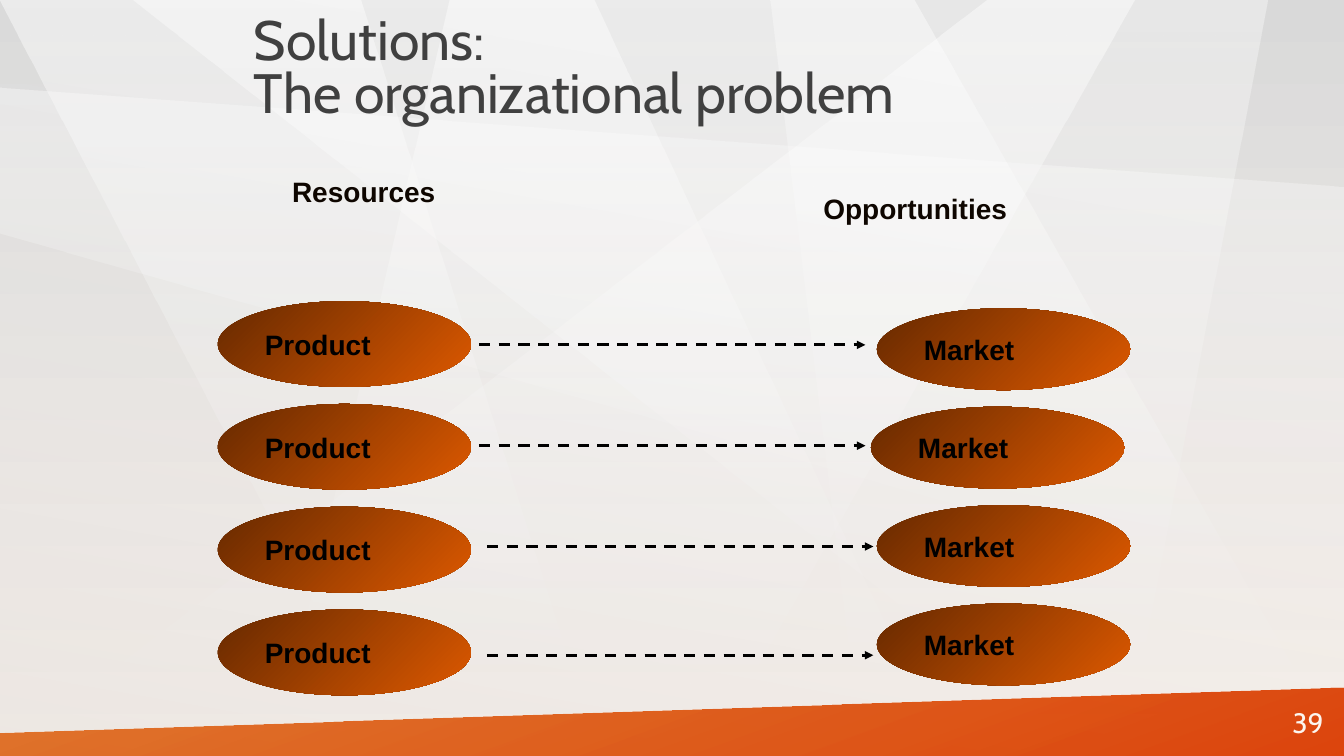
from dataclasses import dataclass

from lxml.etree import SubElement
from pptx import Presentation
from pptx.dml.color import RGBColor
from pptx.enum.dml import MSO_LINE
from pptx.enum.shapes import MSO_CONNECTOR, MSO_SHAPE
from pptx.enum.text import MSO_ANCHOR, PP_ALIGN
from pptx.oxml.ns import qn
from pptx.util import Cm, Pt

RECT, OVAL = MSO_SHAPE.RECTANGLE, MSO_SHAPE.OVAL
STRAIGHT, DASH = MSO_CONNECTOR.STRAIGHT, MSO_LINE.DASH
TOP, MIDDLE = MSO_ANCHOR.TOP, MSO_ANCHOR.MIDDLE
LEFT, RIGHT = PP_ALIGN.LEFT, PP_ALIGN.RIGHT


@dataclass(frozen=True)
class Theme:
    head: str = "Cabin"
    body: str = "Arial"
    title: float = 39.6
    text: float = 20
    grey: str = "404040"
    ink: str = "0E0600"
    black: str = "000000"
    white: str = "FFFFFF"
    cream: str = "FCF5EF"
    silver: str = "D9D9D9"
    shade: str = "BFBFBF"
    brown: str = "662900"
    orange: str = "DD5900"
    red: str = "DC3C00"


theme = Theme()


def paint(item, angle, *stops):
    """Give item a two-stop gradient; each stop is a colour and its opacity in percent."""
    item.fill.gradient()
    item.fill.gradient_angle = 360 - angle
    for stop, (color, alpha) in zip(item.fill.gradient_stops, stops):
        stop.color.rgb = RGBColor.from_string(color)
        if alpha < 100:
            node = item._element.find(f".//{qn('a:gs')}[@pos='{round(stop.position * 100000)}']")
            SubElement(node[0], qn("a:alpha"), val=str(alpha * 1000))
    if hasattr(item, "line"):
        item.line.fill.background()
        item.shadow.inherit = False


def write(shape, lines, color, font=theme.body, size=theme.text, bold=True,
          anchor=MIDDLE, align=LEFT, space=1.0):
    frame = shape.text_frame
    frame.word_wrap = True
    frame.vertical_anchor = anchor
    para = frame.paragraphs[0]
    para.alignment = align
    para.line_spacing = space
    for i, line in enumerate(lines):
        if i:
            para.add_line_break()
        run = para.add_run()
        run.text = line
        run.font.name, run.font.size, run.font.bold = font, Pt(size), bold
        run.font.color.rgb = RGBColor.from_string(color)


deck = Presentation()
deck.slide_width, deck.slide_height = Cm(33.87), Cm(19.05)
slide = deck.slides.add_slide(deck.slide_layouts[6])
shapes = slide.shapes
paint(slide.background, 90, (theme.silver, 100), (theme.cream, 100))

# Backdrop: light facets, a soft shade and the orange floor
clear = (theme.white, 0)
soft, faint = (theme.white, 50), (theme.white, 40)
floor = (theme.orange, 80)
facets = [
    (soft, [(24.87, 0), (0, 19.05), (17.81, 19.05), (28.58, 0)]),
    (soft, [(0, 0), (9.09, 0), (15.09, 19.05), (9.93, 19.05)]),
    (soft, [(3.35, 0), (23.04, 0), (33.87, 19.05), (27.51, 19.05)]),
    (faint, [(19.43, 0), (21.74, 19.05), (28.32, 19.05), (31.93, 0)]),
    (soft, [(14.96, 0), (11.33, 0), (6.91, 19.05), (23.85, 19.05)]),
    (faint, [(0, 2.21), (33.87, 4.72), (33.87, 15.49), (0, 5.89)]),
    (floor, [(0, 18.47), (33.87, 17.32), (33.87, 19.05), (0, 19.05)]),
]
for start, points in facets:
    if start is floor:
        veil = shapes.add_shape(RECT, 0, 0, deck.slide_width, deck.slide_height)
        paint(veil, 280, (theme.shade, 25), clear)
    first, *rest = [(Cm(x), Cm(y)) for x, y in points]
    path = shapes.build_freeform(*first, scale=1.0)
    path.add_line_segments(rest, close=True)
    facet = path.convert_to_shape()
    if start is floor:
        paint(facet, 70, start, (theme.red, 95))
    else:
        paint(facet, 90, start, clear)

# Title and column heads
title = shapes.add_textbox(Cm(6.15), Cm(0.2), Cm(20.32), Cm(3.18))
write(title, ["Solutions: ", "The organizational problem"], theme.grey,
      font=theme.head, size=theme.title, bold=False, space=0.8)
for name, x, y, width in [("Resources", 7.11, 4.27, 4.7), ("Opportunities", 20.5, 4.7, 9.32)]:
    label = shapes.add_textbox(Cm(x), Cm(y), Cm(width), Cm(1.96))
    write(label, [name], theme.ink, anchor=TOP)

# Products on the left, markets on the right
columns = [
    ("Product", [5.49] * 4, 7.59, 2.59, 2.16),
    ("Market", [22.1, 21.95, 22.1, 22.1], 7.77, 2.48, 2.06),
]
for name, lefts, top, step, height in columns:
    for row, x in enumerate(lefts):
        oval = shapes.add_shape(OVAL, Cm(x), Cm(top + row * step), Cm(6.38), Cm(height))
        paint(oval, 45, (theme.brown, 100), (theme.orange, 100))
        write(oval, [name], theme.black)

# Dashed arrows
for x, y in [(12.07, 8.69), (12.07, 11.23), (12.27, 13.77), (12.27, 16.51)]:
    arrow = shapes.add_connector(STRAIGHT, Cm(x), Cm(y), Cm(x + 9.74), Cm(y))
    arrow.line.color.rgb = RGBColor.from_string(theme.black)
    arrow.line.width = Pt(2)
    arrow.line.dash_style = DASH
    SubElement(arrow.line._get_or_add_ln(), qn("a:tailEnd"), type="triangle")
    SubElement(arrow._element.spPr, qn("a:effectLst"))

number = shapes.add_textbox(Cm(30.89), Cm(17.7), Cm(2.72), Cm(1.02))
write(number, ["39"], theme.cream, font=theme.head, bold=False, align=RIGHT)

deck.save("out.pptx")
